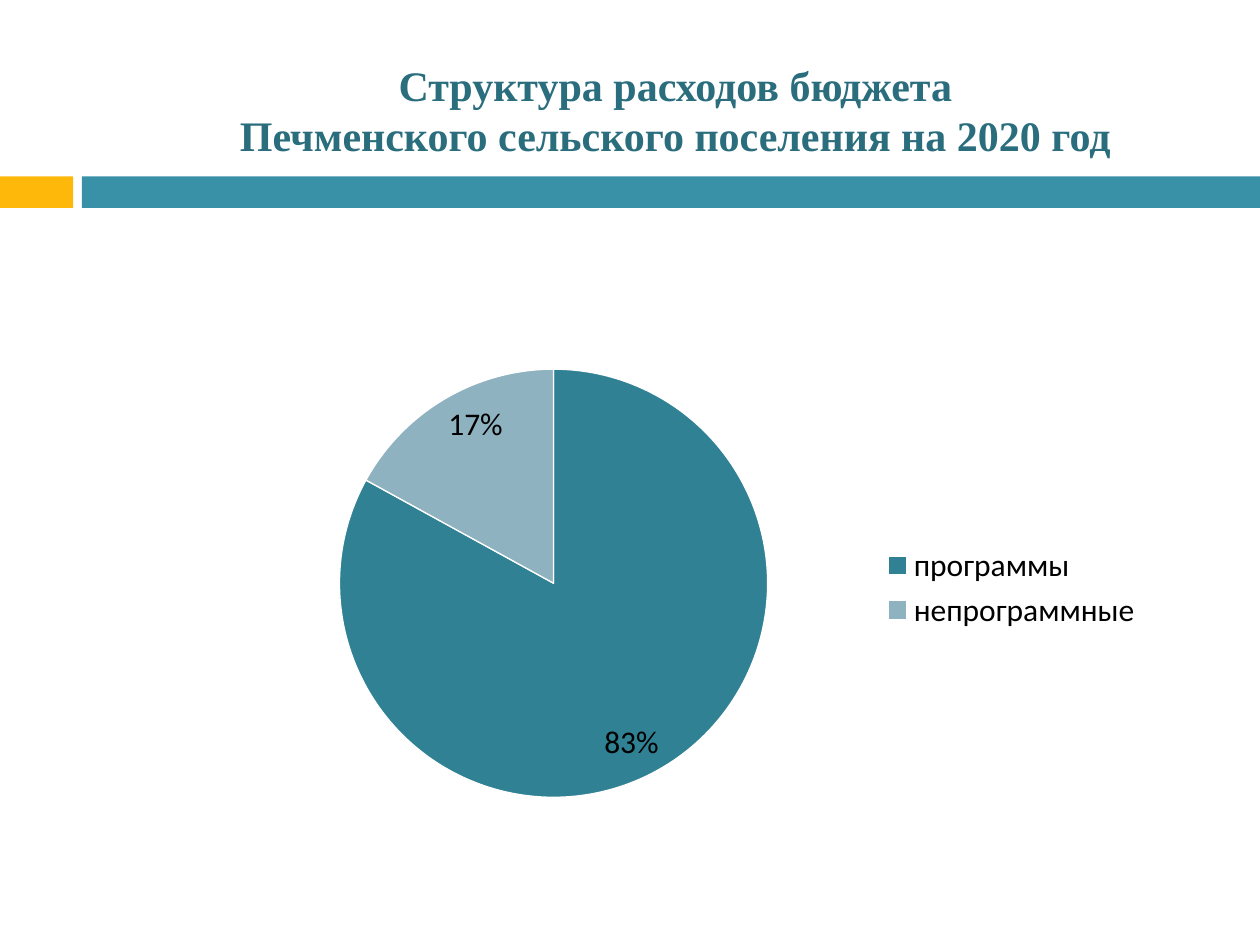
from pptx import Presentation
from pptx.chart.data import CategoryChartData
from pptx.dml.color import RGBColor
from pptx.enum.chart import XL_CHART_TYPE, XL_LABEL_POSITION, XL_LEGEND_POSITION
from pptx.enum.shapes import MSO_SHAPE
from pptx.enum.text import MSO_ANCHOR, PP_ALIGN
from pptx.oxml import parse_xml
from pptx.oxml.ns import nsdecls
from pptx.util import Inches, Pt

PIE = XL_CHART_TYPE.PIE
INSIDE_END = XL_LABEL_POSITION.INSIDE_END
LEGEND_RIGHT = XL_LEGEND_POSITION.RIGHT
RECTANGLE = MSO_SHAPE.RECTANGLE
MIDDLE = MSO_ANCHOR.MIDDLE
CENTER = PP_ALIGN.CENTER

COLORS = {
    "title": "2A6D7D",
    "accent": "FEB80A",
    "band": "3891A7",
    "programs": "308194",
    "other": "8EB2C0",
    "text": "000000",
    "divider": "FFFFFF",
}
TITLE_LINES = ["Структура расходов бюджета", "Печменского сельского поселения на 2020 год"]
EXPENSES = [("программы", 0.83, "programs"), ("непрограммные", 0.17, "other")]

SLIDE_W, SLIDE_H = 10, 7.5
BAND_TOP, BAND_H = 1.4, 0.25
BAND_SPANS = [(0, 0.58, "accent"), (0.65, SLIDE_W, "band")]
TITLE_BOX = (1.38, 0.36, 7.96, 1.02)
CHART_BOX = (1.85, 2.57, 7.32, 4.19)
PIE_SHARES = {"x": 0.115, "y": 0.086, "w": 0.465, "h": 0.811}


def color(name):
    return RGBColor.from_string(COLORS[name])


def add_title(slide):
    title = slide.shapes.title
    title.left, title.top, title.width, title.height = map(Inches, TITLE_BOX)
    frame = title.text_frame
    frame.text = "\v".join(TITLE_LINES)
    frame.vertical_anchor = MIDDLE
    frame.word_wrap = True
    paragraph = frame.paragraphs[0]
    paragraph.alignment = CENTER
    for run in paragraph.runs:
        run.font.name = "Times New Roman"
        run.font.size = Pt(24)
        run.font.bold = True
        run.font.color.rgb = color("title")


def add_band(slide):
    for left, right, fill in BAND_SPANS:
        bar = slide.shapes.add_shape(
            RECTANGLE, Inches(left), Inches(BAND_TOP), Inches(right - left), Inches(BAND_H)
        )
        bar.shadow.inherit = False
        bar.fill.solid()
        bar.fill.fore_color.rgb = color(fill)
        bar.line.fill.background()


def place_plot(chart):
    """Fix the inner plot area as shares of the chart's size."""
    plot_area = chart.plots[0]._element.getparent()
    for layout in plot_area.findall("{*}layout"):
        plot_area.remove(layout)
    modes = '<c:layoutTarget val="inner"/><c:xMode val="edge"/><c:yMode val="edge"/>'
    shares = "".join(f'<c:{key} val="{share}"/>' for key, share in PIE_SHARES.items())
    plot_area.insert(0, parse_xml(
        f'<c:layout {nsdecls("c")}><c:manualLayout>{modes}{shares}</c:manualLayout></c:layout>'
    ))


def add_expense_pie(slide):
    data = CategoryChartData(number_format="0%")
    data.categories = [name for name, _, _ in EXPENSES]
    data.add_series("Series 1", [share for _, share, _ in EXPENSES])
    chart = slide.shapes.add_chart(PIE, *map(Inches, CHART_BOX), data).chart
    chart.has_title = False
    chart.font.name = "Calibri"
    chart.font.size = Pt(18)
    chart.font.color.rgb = color("text")
    chart.has_legend = True
    chart.legend.position = LEGEND_RIGHT
    chart.legend.include_in_layout = False
    place_plot(chart)

    pie = chart.plots[0]
    pie.vary_by_categories = True
    pie.has_data_labels = True
    labels = pie.data_labels
    labels.show_value = True
    labels.show_percentage = False
    labels.number_format = "0%"
    labels.number_format_is_linked = False
    labels.position = INSIDE_END
    for index, (_, _, fill) in enumerate(EXPENSES):
        slice_format = pie.series[0].points[index].format
        slice_format.fill.solid()
        slice_format.fill.fore_color.rgb = color(fill)
        slice_format.line.color.rgb = color("divider")
        slice_format.line.width = Pt(0.75)


def main():
    deck = Presentation()
    deck.slide_width, deck.slide_height = Inches(SLIDE_W), Inches(SLIDE_H)
    slide = deck.slides.add_slide(deck.slide_layouts[5])
    add_band(slide)
    add_title(slide)
    add_expense_pie(slide)
    deck.save("out.pptx")


if __name__ == "__main__":
    main()
